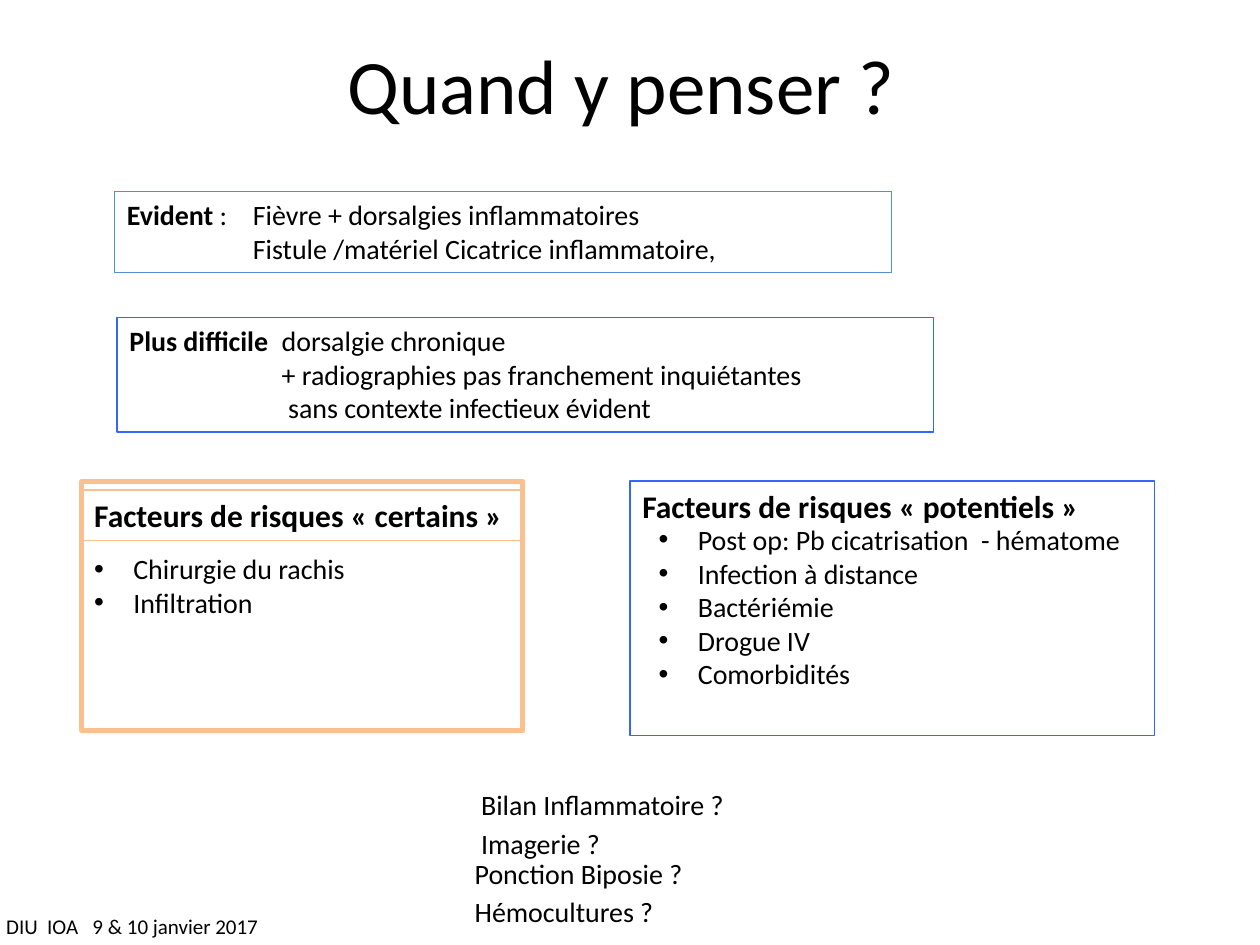
from dataclasses import dataclass

from lxml.etree import SubElement
from pptx import Presentation
from pptx.dml.color import RGBColor
from pptx.enum.shapes import MSO_SHAPE
from pptx.enum.text import MSO_ANCHOR, PP_ALIGN
from pptx.oxml.ns import qn
from pptx.util import Cm, Pt


@dataclass(frozen=True)
class Theme:
    font: str = "Calibri"
    text: str = "000000"
    blue: str = "3366FF"
    light_blue: str = "558ED5"
    orange: str = "FAC090"
    title: int = 44
    heading: int = 18
    body: int = 16
    footer: int = 12
    thin: float = 0.75
    thick: float = 3


T = Theme()
INSET = 0.25
HANG = 0.79


def add_box(s, box, color, width=T.thin):
    sp = s.shapes.add_shape(MSO_SHAPE.RECTANGLE, *map(Cm, box))
    sp.shadow.inherit = False
    sp.fill.background()
    sp.line.color.rgb = RGBColor.from_string(color)
    sp.line.width = Pt(width)
    return sp


def write(sp, lines, size=T.body, bold=False, wrap=True):
    tf = sp.text_frame
    tf.word_wrap = wrap
    tf.vertical_anchor = MSO_ANCHOR.TOP
    tf.text = "\n".join(lines)
    for p in tf.paragraphs:
        p.alignment = PP_ALIGN.LEFT
        for r in p.runs:
            style(r, size, bold)
    return tf


def style(r, size, bold=False):
    r.font.name = T.font
    r.font.size = Pt(size)
    r.font.bold = bold
    r.font.color.rgb = RGBColor.from_string(T.text)


def indent(p, left, first=0):
    pPr = p._p.get_or_add_pPr()
    pPr.set("marL", str(Cm(left)))
    pPr.set("indent", str(Cm(first)))
    return pPr


def add_text(s, box, lines, size=T.body, bold=False, wrap=False):
    return write(s.shapes.add_textbox(*map(Cm, box)), lines, size, bold, wrap)


def add_bullets(s, box, items):
    for p in add_text(s, box, items).paragraphs:
        pPr = indent(p, HANG, -HANG)
        SubElement(pPr, qn("a:buFont"), typeface="Arial")
        SubElement(pPr, qn("a:buChar"), char="•")


def add_title(s, box, text):
    tf = add_text(s, box, [text], T.title, wrap=True)
    tf.vertical_anchor = MSO_ANCHOR.MIDDLE
    tf.paragraphs[0].alignment = PP_ALIGN.CENTER


def add_case(s, box, color, label, mark, lines, left, last_shift=0):
    tf = write(add_box(s, box, color), lines)
    for p in tf.paragraphs:
        indent(p, left)
    indent(tf.paragraphs[-1], left + last_shift)
    p = tf.paragraphs[0]
    indent(p, left, -left)
    p.text = ""
    for text, bold in ((label, True), (f"{mark}\t{lines[0]}", False)):
        r = p.add_run()
        r.text = text
        style(r, T.body, bold)


def add_certain_risks(s, box, heading, items):
    x, y, w, h = box
    write(add_box(s, (x, y + 0.18, w, 1.02), T.orange), [heading],
          T.heading, bold=True, wrap=False)
    add_bullets(s, (x, y + 1.3, w, 1.63), items)
    add_box(s, box, T.orange, T.thick)


def add_potential_risks(s, box, heading, items):
    x, y, w, h = box
    add_text(s, (x, y, w, 0.7), [heading], T.heading, bold=True)
    add_bullets(s, (x + 0.33, y + 0.71, w - 0.33, 3.68), items)
    add_box(s, box, T.blue)


def add_exams(s, box, groups):
    x, y, w, h = box
    for dx, rows in groups:
        for dy, text in rows:
            add_text(s, (x + dx, y + dy, w - dx, 0.94), [text])


def add_footer(s, box, text):
    tf = add_text(s, box, [text], T.footer)
    tf.margin_left = Cm(INSET / 2)


def main():
    prs = Presentation()
    prs.slide_width, prs.slide_height = Cm(25.4), Cm(19.05)
    s = prs.slides.add_slide(prs.slide_layouts[6])

    add_footer(s, (0, 18.29, 5.5, 0.76), "DIU  IOA   9 & 10 janvier 2017")
    add_title(s, (1.27, 0.56, 22.86, 2.26), "Quand y penser ? ")
    add_case(s, (2.36, 6.4, 16.46, 2.31), T.blue, "Plus difficile", "", [
        "dorsalgie chronique",
        "+ radiographies pas franchement inquiétantes",
        "sans contexte infectieux évident",
    ], left=3.07, last_shift=0.13)
    add_case(s, (2.31, 3.86, 15.67, 1.63), T.light_blue, "Evident ", ":", [
        "Fièvre + dorsalgies inflammatoires",
        "Fistule /matériel Cicatrice inflammatoire,",
    ], left=2.54)
    add_certain_risks(s, (1.65, 9.7, 8.89, 5.03),
                      "Facteurs de risques «\u00a0certains\u00a0»",
                      ["Chirurgie du rachis", "Infiltration"])
    add_potential_risks(s, (12.7, 9.7, 10.57, 5.13),
                        "Facteurs de risques «\u00a0potentiels\u00a0»", [
                            "Post op: Pb cicatrisation  - hématome",
                            "Infection à distance",
                            "Bactériémie",
                            "Drogue IV",
                            "Comorbidités",
                        ])
    add_exams(s, (9.32, 15.75, 5.85, 3.1), [
        (0.13, [(0, "Bilan Inflammatoire ?"), (0.79, "Imagerie ?")]),
        (0, [(1.4, "Ponction Biposie ?"), (2.16, "Hémocultures ?")]),
    ])
    prs.save("out.pptx")


if __name__ == "__main__":
    main()
